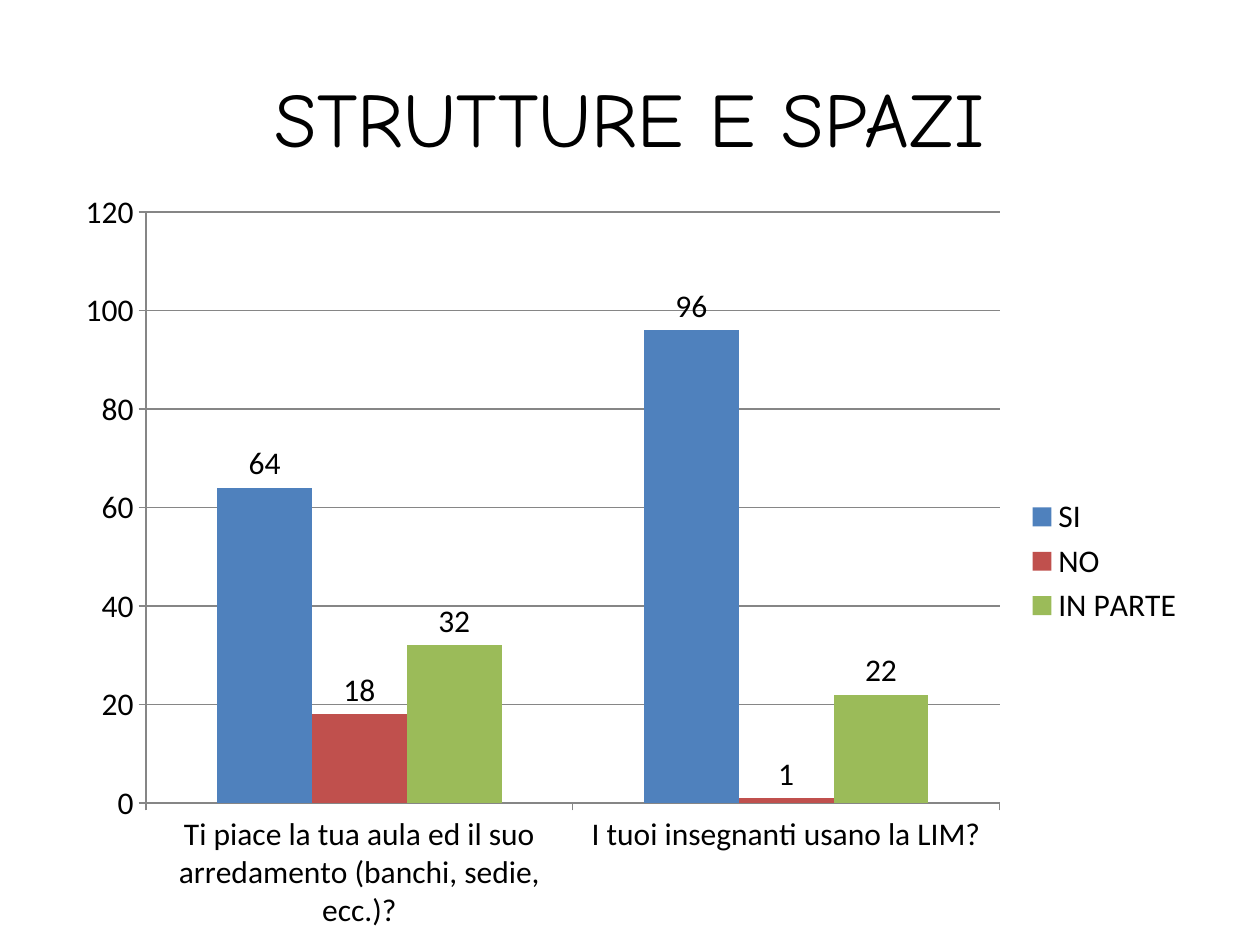
from dataclasses import dataclass

from pptx import Presentation
from pptx.chart.data import CategoryChartData
from pptx.dml.color import RGBColor
from pptx.enum.chart import (
    XL_CHART_TYPE, XL_LABEL_POSITION, XL_LEGEND_POSITION, XL_TICK_MARK)
from pptx.enum.text import MSO_ANCHOR, PP_ALIGN
from pptx.slide import Slide
from pptx.util import Pt

COLORS = {"text": "000000", "axis": "868686",
          "blue": "4F81BD", "red": "C0504D", "green": "9BBB59"}


@dataclass
class Answer:
    name: str
    votes: tuple[int, ...]
    color: str


@dataclass
class Box:
    left: float
    top: float
    width: float
    height: float

    def points(self) -> tuple[Pt, ...]:
        return Pt(self.left), Pt(self.top), Pt(self.width), Pt(self.height)


QUESTIONS = ("Ti piace la tua aula ed il suo arredamento (banchi, sedie, ecc.)?",
             "I tuoi insegnanti usano la LIM?")
ANSWERS = (Answer("SI", (64, 96), "blue"),
           Answer("NO", (18, 1), "red"),
           Answer("IN PARTE", (32, 22), "green"))


def color(name: str) -> RGBColor:
    return RGBColor.from_string(COLORS[name])


def style_font(font, face: str, size: float) -> None:
    font.name = face
    font.size = Pt(size)
    font.color.rgb = color("text")


def style_line(line) -> None:
    line.color.rgb = color("axis")
    line.width = Pt(0.75)


def add_title(slide: Slide, box: Box, text: str) -> None:
    frame = slide.shapes.add_textbox(*box.points()).text_frame
    frame.word_wrap = True
    frame.vertical_anchor = MSO_ANCHOR.MIDDLE
    para = frame.paragraphs[0]
    para.alignment = PP_ALIGN.CENTER
    run = para.add_run()
    run.text = text
    style_font(run.font, "Comic Neue", 44)


def add_bars(slide: Slide, box: Box) -> None:
    data = CategoryChartData()
    data.categories = QUESTIONS
    for answer in ANSWERS:
        data.add_series(answer.name, answer.votes)
    chart = slide.shapes.add_chart(
        XL_CHART_TYPE.COLUMN_CLUSTERED, *box.points(), data).chart
    chart.has_title = False
    style_font(chart.font, "Calibri", 18)

    # Legend
    chart.has_legend = True
    chart.legend.position = XL_LEGEND_POSITION.RIGHT
    chart.legend.include_in_layout = False

    # Axes and grid
    for axis in (chart.category_axis, chart.value_axis):
        axis.major_tick_mark = XL_TICK_MARK.OUTSIDE
        axis.minor_tick_mark = XL_TICK_MARK.NONE
        style_line(axis.format.line)
    chart.value_axis.has_major_gridlines = True
    style_line(chart.value_axis.major_gridlines.format.line)

    # Bars and their values
    plot = chart.plots[0]
    plot.gap_width = 150
    plot.vary_by_categories = False
    for series, answer in zip(plot.series, ANSWERS):
        series.format.fill.solid()
        series.format.fill.fore_color.rgb = color(answer.color)
        series.invert_if_negative = False
        labels = series.data_labels
        labels.show_value = True
        labels.position = XL_LABEL_POSITION.OUTSIDE_END
        style_font(labels.font, "Calibri", 18)


def main() -> None:
    deck = Presentation()
    deck.slide_width, deck.slide_height = Pt(720), Pt(540)
    slide = deck.slides.add_slide(deck.slide_layouts[6])
    add_title(slide, Box(36, 21.6, 648, 90), "STRUTTURE E SPAZI")
    add_bars(slide, Box(36, 101.5, 648, 438.5))
    deck.save("out.pptx")


if __name__ == "__main__":
    main()
